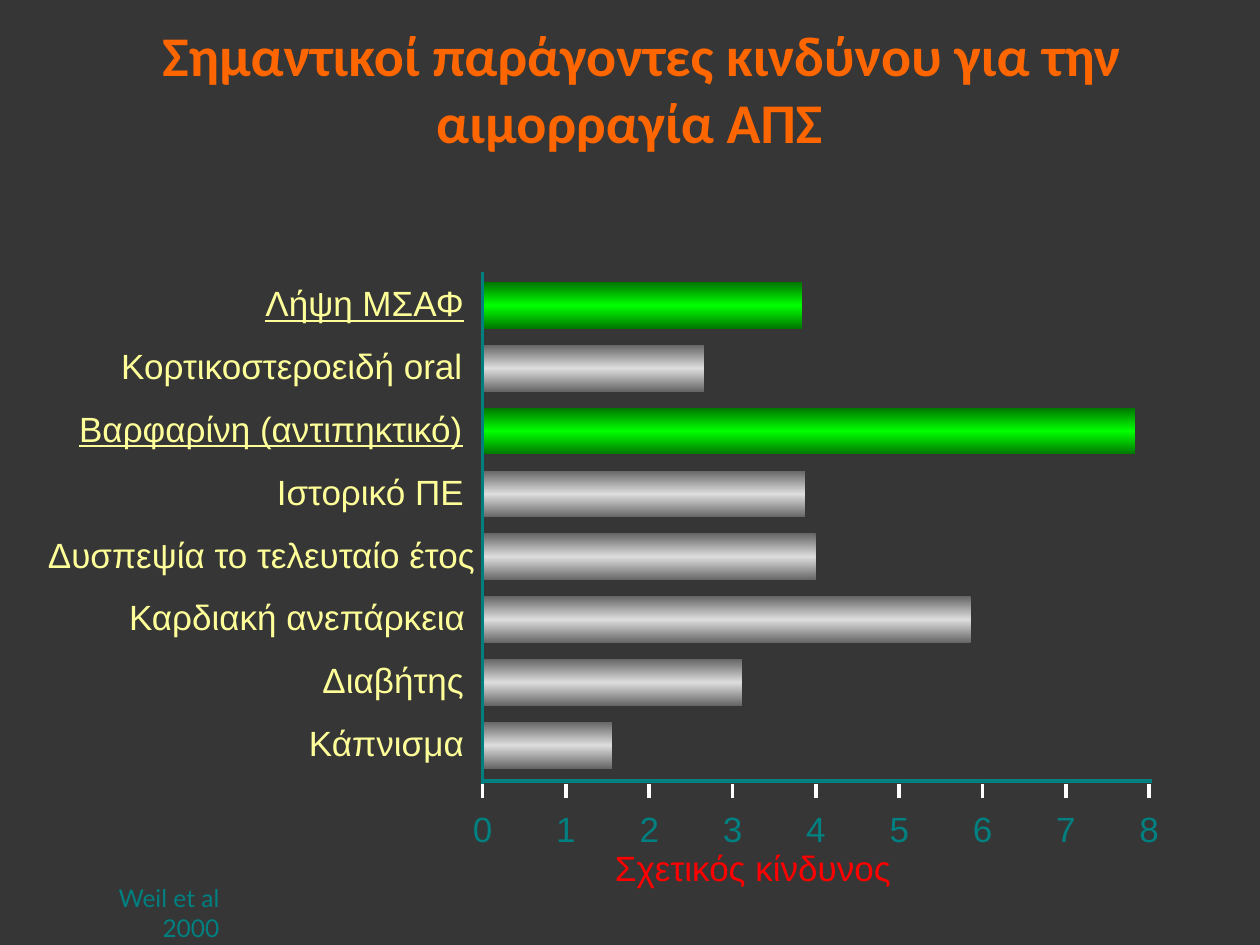
from copy import deepcopy
from dataclasses import dataclass

from lxml import etree
from pptx import Presentation
from pptx.dml.color import RGBColor
from pptx.enum.shapes import MSO_CONNECTOR, MSO_SHAPE
from pptx.enum.text import MSO_ANCHOR, PP_ALIGN
from pptx.oxml.ns import qn
from pptx.util import Inches, Pt

LEFT, CENTER, RIGHT = PP_ALIGN.LEFT, PP_ALIGN.CENTER, PP_ALIGN.RIGHT
TOP, MIDDLE = MSO_ANCHOR.TOP, MSO_ANCHOR.MIDDLE
STRAIGHT = MSO_CONNECTOR.STRAIGHT
RECTANGLE = MSO_SHAPE.RECTANGLE

BACKGROUND = RGBColor(0x36, 0x36, 0x36)
ORANGE = RGBColor(0xFF, 0x66, 0x00)
TEAL = RGBColor(0x00, 0x80, 0x80)
RED = RGBColor(0xFF, 0x00, 0x00)
WHITE = RGBColor(0xFF, 0xFF, 0xFF)
PALE_YELLOW = RGBColor(0xFF, 0xFF, 0x99)
DARK_GREY = RGBColor(0x66, 0x66, 0x66)
LIGHT_GREY = RGBColor(0xDD, 0xDD, 0xDD)
DARK_GREEN = RGBColor(0x00, 0x76, 0x00)
BRIGHT_GREEN = RGBColor(0x00, 0xFF, 0x00)

AXIS_X, AXIS_TOP, AXIS_Y = 3.83, 2.16, 6.2
UNIT = 5.29 / 8
FIRST_BAR, BAR_PITCH, BAR_HEIGHT = 2.24, 3.49 / 7, 0.37
LABEL_HEIGHT = 0.4
TICK_TOP, TICK_BOTTOM = 6.22, 6.33


@dataclass
class Box:
    left: float
    top: float
    width: float
    height: float


@dataclass
class RiskFactor:
    name: str
    relative_risk: float
    label_left: float = 0.98
    label_width: float = 2.8
    align: PP_ALIGN = RIGHT
    highlighted: bool = False


RISK_FACTORS = [
    RiskFactor("Λήψη ΜΣΑΦ", 3.84, highlighted=True),
    RiskFactor("Κορτικοστεροειδή oral", 2.66, 0, 3.77),
    RiskFactor("Βαρφαρίνη (αντιπηκτικό)", 7.83, 0.53, 4.13, LEFT, True),
    RiskFactor("Ιστορικό ΠΕ", 3.87),
    RiskFactor("Δυσπεψία το τελευταίο έτος", 4.0, -0.12, 3.99),
    RiskFactor("Καρδιακή ανεπάρκεια", 5.86, 0, 3.79),
    RiskFactor("Διαβήτης", 3.12),
    RiskFactor("Κάπνισμα", 1.56),
]


def add_text(slide, text: str, box: Box, color: RGBColor, align: PP_ALIGN,
             anchor: MSO_ANCHOR = TOP, wrap: bool = True, spacing: float = 1.0,
             **font_format):
    """Add a one-paragraph text box and return its paragraph."""
    frame = slide.shapes.add_textbox(
        Inches(box.left), Inches(box.top), Inches(box.width), Inches(box.height)
    ).text_frame
    frame.word_wrap = wrap
    frame.vertical_anchor = anchor
    paragraph = frame.paragraphs[0]
    paragraph.alignment = align
    paragraph.line_spacing = spacing
    run = paragraph.add_run()
    run.text = text
    run.font.color.rgb = color
    for attribute, value in ({"name": "Arial", "size": Pt(20)} | font_format).items():
        setattr(run.font, attribute, value)
    return paragraph


def add_line(slide, x1: float, y1: float, x2: float, y2: float,
             color: RGBColor) -> None:
    line = slide.shapes.add_connector(
        STRAIGHT, Inches(x1), Inches(y1), Inches(x2), Inches(y2))
    line.line.color.rgb = color
    line.line.width = Pt(2)
    etree.SubElement(line._element.spPr, qn("a:effectLst"))


def add_bar(slide, box: Box, edge: RGBColor, middle: RGBColor) -> None:
    """Add a bar shaded vertically from edge to middle and back."""
    bar = slide.shapes.add_shape(
        RECTANGLE, Inches(box.left), Inches(box.top),
        Inches(box.width), Inches(box.height))
    bar.shadow.inherit = False
    bar.line.fill.background()
    bar.fill.gradient()
    bar.fill.gradient_angle = 90
    stop_list = bar._element.spPr.find(".//" + qn("a:gsLst"))
    stop_list.append(deepcopy(stop_list[0]))
    shades = [(0, edge), (0.5, middle), (1, edge)]
    for stop, (position, color) in zip(bar.fill.gradient_stops, shades):
        stop.position = position
        stop.color.rgb = color


def add_risk_factor(slide, factor: RiskFactor, row: int) -> None:
    top = FIRST_BAR + row * BAR_PITCH
    shades = (DARK_GREEN, BRIGHT_GREEN) if factor.highlighted else (DARK_GREY, LIGHT_GREY)
    add_bar(slide, Box(AXIS_X, top, factor.relative_risk * UNIT, BAR_HEIGHT), *shades)
    label_top = top + (BAR_HEIGHT - LABEL_HEIGHT) / 2
    add_text(slide, factor.name,
             Box(factor.label_left, label_top, factor.label_width, LABEL_HEIGHT),
             PALE_YELLOW, factor.align, MIDDLE, spacing=0.9,
             underline=factor.highlighted)


def add_tick(slide, value: int) -> None:
    x = AXIS_X + value * UNIT
    add_line(slide, x, TICK_TOP, x, TICK_BOTTOM, WHITE)
    add_text(slide, str(value), Box(x - 0.175, 6.36, 0.35, 0.43), TEAL, CENTER,
             wrap=False)


def main() -> None:
    deck = Presentation()
    deck.slide_width, deck.slide_height = Inches(10), Inches(7.5)
    slide = deck.slides.add_slide(deck.slide_layouts[6])
    slide.background.fill.solid()
    slide.background.fill.fore_color.rgb = BACKGROUND

    title = add_text(slide, "Σημαντικοί παράγοντες κινδύνου για την αιμορραγία ΑΠΣ",
                     Box(0, 0.07, 9.99, 1.25), ORANGE, CENTER, MIDDLE,
                     name="Calibri", size=Pt(32), bold=True)
    title._p.get_or_add_pPr().set("indent", str(Inches(0.2)))
    add_text(slide, "Weil et al 2000", Box(0.35, 6.96, 1.49, 0.33), TEAL, RIGHT,
             name="Lato", size=Pt(14))
    add_text(slide, "Σχετικός κίνδυνος", Box(4.46, 6.67, 2.71, 0.43), RED, RIGHT)

    add_line(slide, 3.82, AXIS_Y, 9.14, AXIS_Y, TEAL)
    for value in range(9):
        add_tick(slide, value)
    for row, factor in enumerate(RISK_FACTORS):
        add_risk_factor(slide, factor, row)
    add_line(slide, AXIS_X, AXIS_TOP, AXIS_X, TICK_TOP, TEAL)

    deck.save("out.pptx")


if __name__ == "__main__":
    main()
